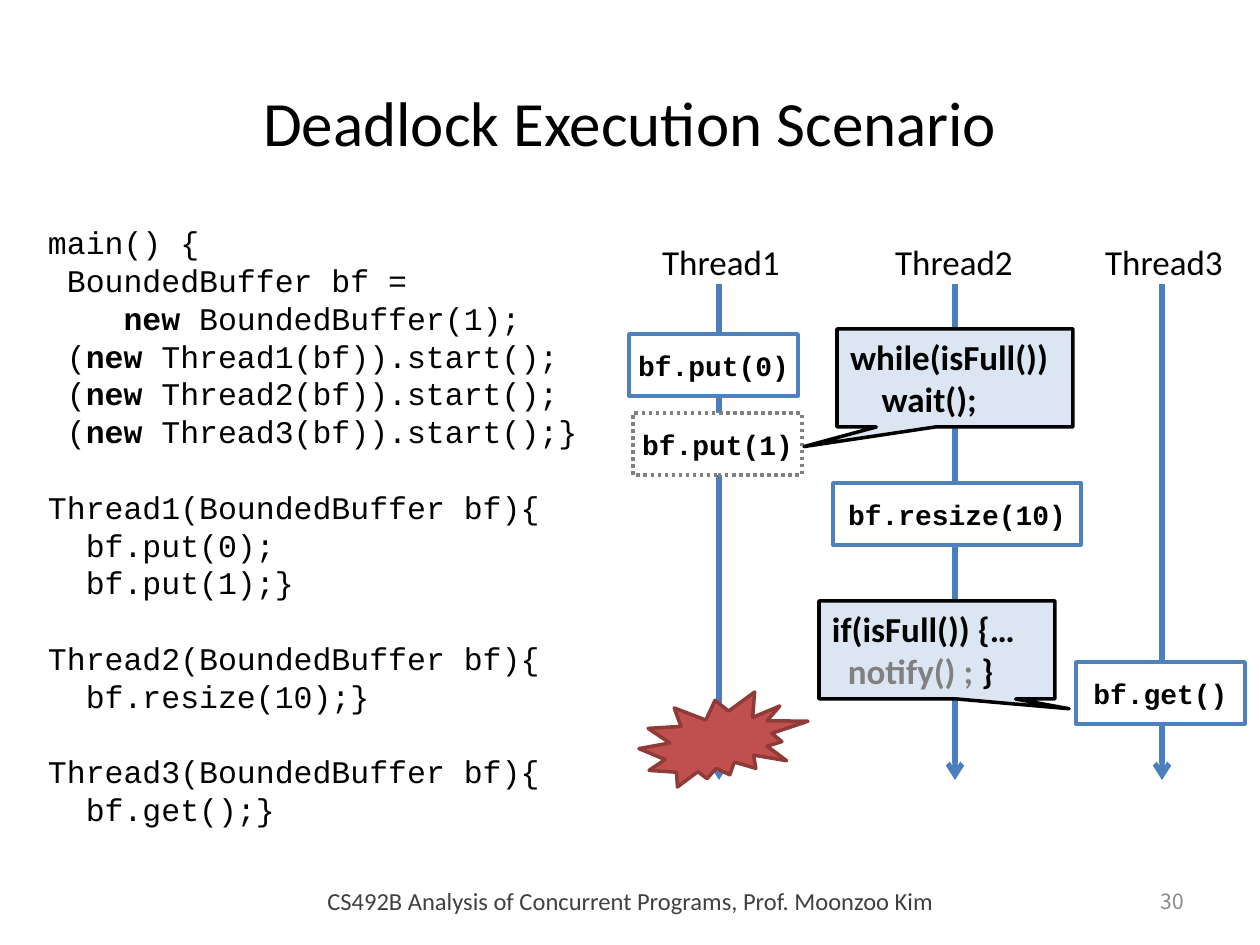
from lxml import etree
from pptx import Presentation
from pptx import util as u
from pptx.dml.color import RGBColor
from pptx.enum import dml, shapes, text
from pptx.oxml.ns import qn

PX = 914400 / 126
COLORS = {
    "black": "000000", "white": "FFFFFF", "gray": "808080",
    "footer": "404040", "number": "8C8C8C", "timeline": "4B7EBC",
    "call": "4F81BD", "note": "DCE6F2", "burst": "C0504D", "burst_edge": "8E3B39",
}
MONO, SANS = "Courier New", "Calibri"
LEFT, CENTER, RIGHT = text.PP_ALIGN.LEFT, text.PP_ALIGN.CENTER, text.PP_ALIGN.RIGHT
MIDDLE, TOP = text.MSO_ANCHOR.MIDDLE, text.MSO_ANCHOR.TOP


def px(*lengths):
    return [round(n * PX) for n in lengths]


def write(shape, lines, size, font, align=LEFT, anchor=MIDDLE, color="black", bold=False, inset=13):
    frame = shape.text_frame
    frame.word_wrap = True
    frame.vertical_anchor = anchor
    frame.margin_left = frame.margin_right = px(inset)[0]
    for i, line in enumerate(lines):
        paragraph = frame.paragraphs[0] if i == 0 else frame.add_paragraph()
        paragraph.alignment = align
        for words, run_color, run_bold in line:
            if words == "\n":
                paragraph.add_line_break()
                continue
            run = paragraph.add_run()
            run.text = words
            run.font.size = u.Pt(size)
            run.font.name = font
            run.font.bold = run_bold or bold
            run.font.color.rgb = RGBColor.from_string(COLORS[run_color or color])
    return frame


def plain(words):
    return [(words, None, False)]


prs = Presentation()
prs.slide_width, prs.slide_height = px(1260, 945)
slide = prs.slides.add_slide(prs.slide_layouts[5])
parts = slide.shapes

title = parts.title
title.left, title.top, title.width, title.height = px(63, 37, 1134, 169)
write(title, [plain("Deadlock Execution Scenario")], 36, SANS, CENTER)

new = ("new", None, True)
starts = [
    [(" (", None, False), new, (f" Thread{n}(bf)).start();{end}", None, False)]
    for n, end in ((1, ""), (2, ""), (3, "}"))
]
main_lines = [
    plain("main() {"),
    [(" BoundedBuffer bf =", None, False), ("\n", None, False), ("   ", None, False),
     (" new ", None, True), ("BoundedBuffer(1);", None, False)],
    *starts,
]
main_lines[1][2:4] = [("    ", None, False), ("new ", None, True)]
thread_lines = [
    "Thread1(BoundedBuffer bf){", "  bf.put(0);", "  bf.put(1);}",
    "Thread2(BoundedBuffer bf){", "  bf.resize(10);}",
    "Thread3(BoundedBuffer bf){", "  bf.get();}",
]
program = parts.add_textbox(*px(35, 217, 615, 624))
code = write(program, main_lines + [plain(line) for line in thread_lines], 18, MONO, anchor=TOP)
for paragraph in code.paragraphs:
    paragraph.line_spacing = u.Pt(21.6)
    if paragraph.text.startswith("Thread"):
        paragraph.space_before = u.Pt(21.6)

for x in (719, 955, 1162):
    timeline = parts.add_connector(shapes.MSO_CONNECTOR.STRAIGHT, *px(x, 284, x, 780))
    timeline.line.color.rgb = RGBColor.from_string(COLORS["timeline"])
    timeline.line.width = u.Pt(3)
    etree.SubElement(timeline.line._get_or_add_ln(), qn("a:tailEnd"), type="arrow")
    etree.SubElement(timeline._element.spPr, qn("a:effectLst"))

for n, x in enumerate((643, 876, 1086), 1):
    thread_label = parts.add_textbox(*px(x, 234, 156, 55))
    write(thread_label, [plain(f"Thread{n}")], 20, SANS, CENTER, TOP, inset=5)

SHAPE = shapes.MSO_SHAPE
calls = [
    ("bf.put(0)", 629, 334, 169, "call"),
    ("bf.resize(10)", 833, 483, 248, "call"),
    ("bf.put(1)", 633, 413, 169, "gray"),
    ("bf.get()", 1076, 662, 169, "call"),
]
boxes = [
    (SHAPE.RECTANGLE, (x, y, w, 62), "white", edge, [plain(words)])
    for words, x, y, w, edge in calls
]
boxes += [
    (SHAPE.RECTANGULAR_CALLOUT, (837, 329, 236, 98), "note", "black",
     [plain("while(isFull())"), plain("    wait();")]),
    (SHAPE.RECTANGULAR_CALLOUT, (819, 601, 236, 98), "note", "black",
     [plain("if(isFull()) {…"),
      [("  ", None, False), ("notify() ;", "gray", False), (" }", None, False)]]),
    (SHAPE.EXPLOSION2, (639, 692, 169, 95), "burst", "burst_edge", []),
]
tails = iter([(-0.64, 0.7), (0.56, 0.6)])
for kind, place, fill, edge, lines in boxes:
    box = parts.add_shape(kind, *px(*place))
    box.shadow.inherit = False
    box.fill.solid()
    box.fill.fore_color.rgb = RGBColor.from_string(COLORS[fill])
    box.line.color.rgb = RGBColor.from_string(COLORS[edge])
    box.line.width = u.Pt(2)
    if edge == "gray":
        box.line.dash_style = dml.MSO_LINE.ROUND_DOT
    if kind == SHAPE.RECTANGLE:
        write(box, lines, 16, MONO, CENTER, bold=True, inset=5)
    elif kind == SHAPE.RECTANGULAR_CALLOUT:
        box.adjustments[0], box.adjustments[1] = next(tails)
        write(box, lines, 20, SANS, bold=True)

page_number = parts.add_textbox(*px(1066, 876, 131, 50))
write(page_number, [plain("30")], 12, "Noto Sans CJK KR", RIGHT, color="number")
course = parts.add_textbox(*px(263, 876, 735, 50))
write(course, [plain("CS492B Analysis of Concurrent Programs, Prof. Moonzoo Kim")],
      14, SANS, CENTER, color="footer")

prs.save("out.pptx")
